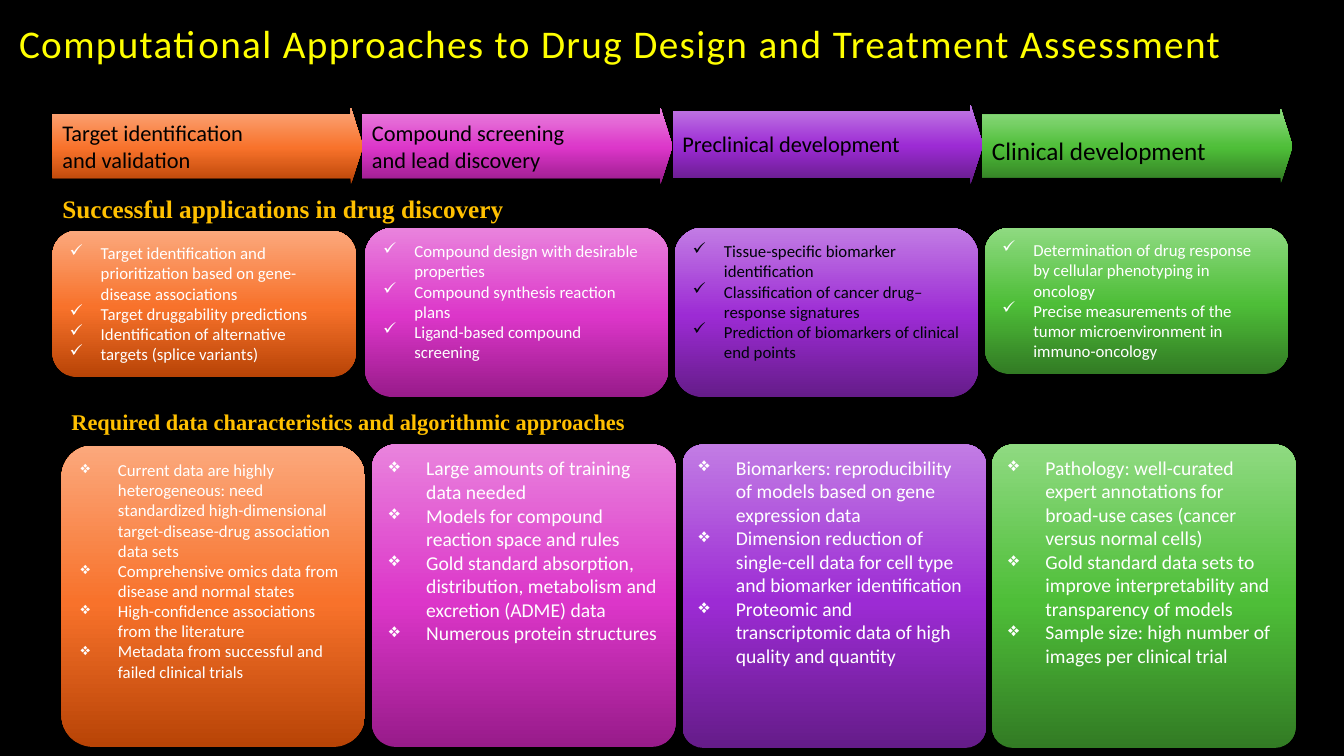
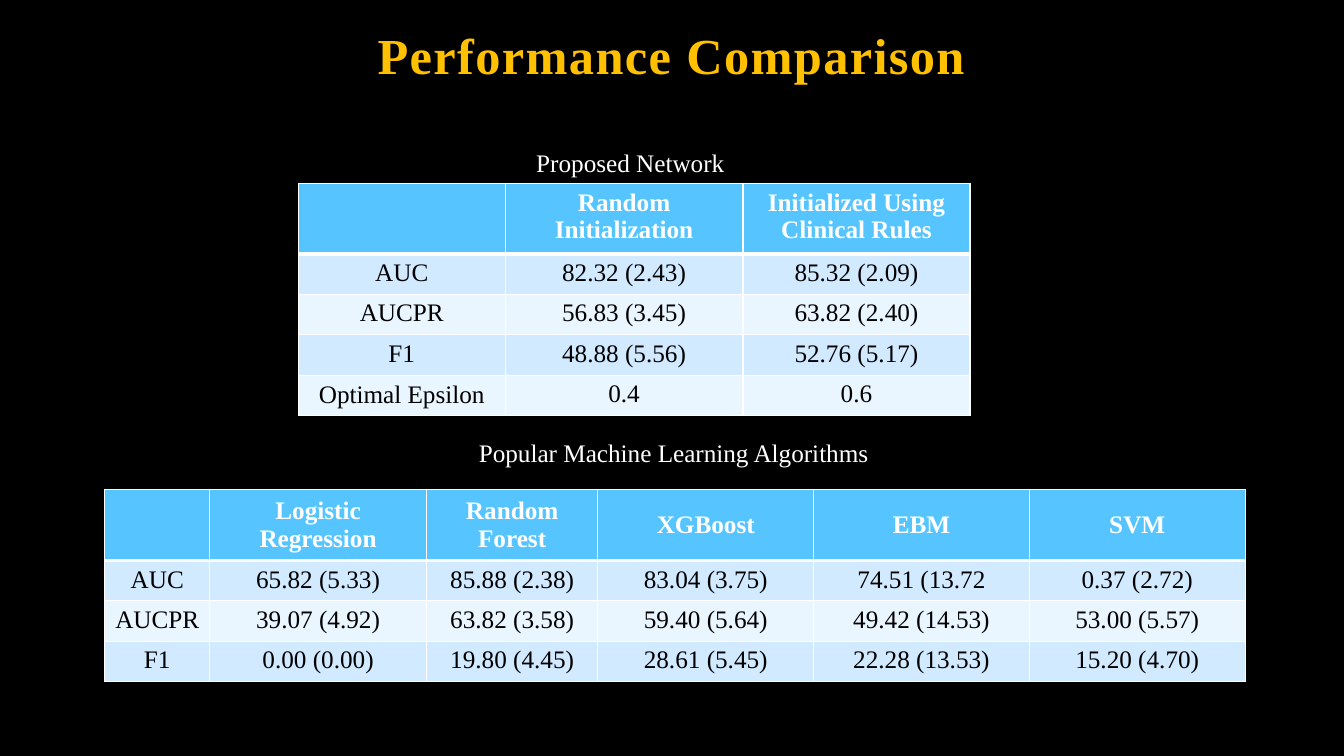
from copy import deepcopy

from lxml.etree import SubElement
from pptx import Presentation
from pptx.dml.color import RGBColor
from pptx.enum.shapes import MSO_SHAPE
from pptx.enum.text import MSO_ANCHOR, PP_ALIGN
from pptx.oxml.ns import qn
from pptx.util import Pt

PX = 9144  # 100 px to the inch
SANS, SERIF = "Calibri", "Times New Roman"
INK = {
    "back": "000000", "dark": "000000", "light": "FFFFFF", "navy": "00040A",
    "gold": "FFC000", "yellow": "FFFF00",
    "head": "56C5FF", "odd": "D1EAFF", "even": "E9F5FF",
}
HUES = {  # bottom, middle, top
    "orange": ("B84406", "F8722B", "FBA87C"),
    "pink": ("981B8A", "DC36C9", "E983DD"),
    "purple": ("651C89", "9C2BD4", "C27CE4"),
    "green": ("327B24", "4EBE38", "8FDA81"),
}


def write(frame, lines, size, face, ink, bold=False, align=PP_ALIGN.LEFT,
          space=None, mark=None, track=0):
    """Fill a text frame; mark is a (bullet, indent) pair, track is in points."""
    frame.word_wrap = True
    for i, line in enumerate(lines):
        para = frame.add_paragraph() if i else frame.paragraphs[0]
        para.alignment = align
        if space:
            para.line_spacing = space
        if mark:
            props = para._p.get_or_add_pPr()
            props.set("marL", str(mark[1] * PX))
            props.set("indent", str(-mark[1] * PX))
            SubElement(props, qn("a:buChar")).set("char", mark[0])
        run = para.add_run()
        run.text = line
        font = run.font
        font.size, font.name, font.bold = Pt(size), face, bold
        font.color.rgb = RGBColor.from_string(INK[ink])
        if track:
            run._r.get_or_add_rPr().set("spc", str(track * 100))


def label(slide, area, text, size, ink, face=SERIF, anchor=MSO_ANCHOR.TOP, **style):
    frame = slide.shapes.add_textbox(*[n * PX for n in area]).text_frame
    frame.vertical_anchor = anchor
    write(frame, [text], size, face, ink, **style)


deck = Presentation()
deck.slide_width, deck.slide_height = 1333 * PX, 750 * PX
back = deck.slide_master.background.fill
back.solid()
back.fore_color.rgb = RGBColor.from_string(INK["back"])
blank = deck.slide_layouts[6]
title = {"anchor": MSO_ANCHOR.BOTTOM, "space": 0.9, "track": 1}

# Slide 1: stages of drug design
slide = deck.slides.add_slide(blank)
label(slide, (9, 0, 1301, 71),
      "Computational Approaches to Drug Design and Treatment Assessment",
      28, "yellow", SANS, **title)
label(slide, (52, 187, 468, 40), "Successful applications in drug discovery",
      18, "gold", bold=True)
label(slide, (61, 400, 582, 37),
      "Required data characteristics and algorithmic approaches",
      16, "gold", bold=True)

# Each part: area, text size, ink, lines; arrows add line spacing, needs a corner
arrows = [
    ((52, 107, 308, 76), 16, ["Target identification", "and validation"], None),
    ((359, 107, 308, 76), 16, ["Compound screening", "and lead discovery"], None),
    ((667, 104, 308, 79), 16, ["Preclinical development"], 1.5),
    ((974, 108, 308, 74), 18, ["Clinical development"], 1.5),
]
uses = [
    ((52, 229, 301, 145), "light", [
        "Target identification and prioritization based on gene-disease associations",
        "Target druggability predictions",
        "Identification of alternative",
        "targets (splice variants)"]),
    ((362, 226, 301, 168), "light", [
        "Compound design with desirable properties",
        "Compound synthesis reaction plans",
        "Ligand-based compound screening"]),
    ((669, 226, 301, 168), "navy", [
        "Tissue-specific biomarker identification",
        "Classification of cancer drug–response signatures",
        "Prediction of biomarkers of clinical end points"]),
    ((977, 226, 301, 145), "light", [
        "Determination of drug response by cellular phenotyping in oncology",
        "Precise measurements of the tumor microenvironment in immuno-oncology"]),
]
needs = [
    ((61, 442, 301, 299), 12, 0.105, [
        "Current data are highly heterogeneous: need standardized "
        "high-dimensional target-disease-drug association data sets",
        "Comprehensive omics data from disease and normal states",
        "High-confidence associations from the literature",
        "Metadata from successful and failed clinical trials"]),
    ((369, 441, 301, 300), 14, 0.078, [
        "Large amounts of training data needed",
        "Models for compound reaction space and rules",
        "Gold standard absorption, distribution, metabolism and excretion (ADME) data",
        "Numerous protein structures"]),
    ((677, 441, 301, 301), 14, 0.068, [
        "Biomarkers: reproducibility of models based on gene expression data",
        "Dimension reduction of single-cell data for cell type and "
        "biomarker identification",
        "Proteomic and transcriptomic data of high quality and quantity"]),
    ((984, 441, 301, 301), 14, 0.068, [
        "Pathology: well-curated expert annotations for broad-use cases "
        "(cancer versus normal cells)",
        "Gold standard data sets to improve interpretability and "
        "transparency of models",
        "Sample size: high number of images per clinical trial"]),
]

ARROW, CARD = MSO_SHAPE.RIGHT_ARROW, MSO_SHAPE.ROUNDED_RECTANGLE
parts = [
    [(ARROW, area, (0.836, 0.158), lines, size, "dark", {"space": space})
     for area, size, lines, space in arrows],
    [(CARD, area, (0.167,), lines, 12, ink, {"mark": ("✓", 31)})
     for area, ink, lines in uses],
    [(CARD, area, (bend,), lines, size, "light", {"mark": ("❖", 37)})
     for area, size, bend, lines in needs],
]
for row in parts:
    for hue, (kind, area, bends, lines, size, ink, style) in zip(HUES.values(), row):
        shape = slide.shapes.add_shape(kind, *[n * PX for n in area])
        shape.shadow.inherit = False
        shape.line.fill.background()
        for i, bend in enumerate(bends):
            shape.adjustments[i] = bend
        fill = shape.fill
        fill.gradient()
        fill.gradient_angle = 90
        first = shape._element.spPr.find(".//" + qn("a:gs"))
        first.addnext(deepcopy(first))
        for stop, place, tone in zip(fill.gradient_stops, (0, 0.48, 1), hue):
            stop.position = place
            stop.color.rgb = RGBColor.from_string(tone)
        shape.text_frame.vertical_anchor = MSO_ANCHOR.TOP
        write(shape.text_frame, lines, size, SANS, ink, **style)

# Slide 2: results
slide = deck.slides.add_slide(blank)
label(slide, (91, 17, 1150, 73), "Performance Comparison", 36, "gold",
      bold=True, align=PP_ALIGN.CENTER, **title)
label(slide, (522, 141, 216, 40), "Proposed Network", 18, "light")
label(slide, (465, 429, 411, 40), "Popular Machine Learning Algorithms", 18, "light")

TOP, MID = MSO_ANCHOR.TOP, MSO_ANCHOR.MIDDLE
grids = [
    ((296, 182), (205, 236, 225), TOP, [
        ("", "Random Initialization", "Initialized Using Clinical Rules"),
        ("AUC", "82.32 (2.43)", "85.32 (2.09)"),
        ("AUCPR", "56.83 (3.45)", "63.82 (2.40)"),
        ("F1", "48.88 (5.56)", "52.76 (5.17)"),
        ("Optimal Epsilon", "0.4", "0.6")]),
    ((104, 486), (104, 215, 170, 214, 214, 214), MID, [
        ("", "Logistic Regression", "Random Forest", "XGBoost", "EBM", "SVM"),
        ("AUC", "65.82 (5.33)", "85.88 (2.38)", "83.04 (3.75)", "74.51 (13.72",
         "0.37 (2.72)"),
        ("AUCPR", "39.07 (4.92)", "63.82 (3.58)", "59.40 (5.64)", "49.42 (14.53)",
         "53.00 (5.57)"),
        ("F1", "0.00 (0.00)", "19.80 (4.45)", "28.61 (5.45)", "22.28 (13.53)",
         "15.20 (4.70)")]),
]
for (left, top), widths, anchor, rows in grids:
    highs = [70] + [40] * (len(rows) - 1)
    table = slide.shapes.add_table(
        len(rows), len(widths), left * PX, top * PX,
        sum(widths) * PX, sum(highs) * PX).table
    table.horz_banding = False
    for col, width in zip(table.columns, widths):
        col.width = width * PX
    for r, texts in enumerate(rows):
        table.rows[r].height = highs[r] * PX
        tone = "head" if r == 0 else "odd" if r % 2 else "even"
        for c, text in enumerate(texts):
            cell = table.cell(r, c)
            props = cell._tc.get_or_add_tcPr()
            for side in ("lnL", "lnR", "lnT", "lnB"):
                thick = (r, side) in ((0, "lnB"), (1, "lnT"))
                edge = SubElement(props, qn("a:" + side))
                edge.set("w", str(Pt(3 if thick else 1)))
                paint = SubElement(edge, qn("a:solidFill"))
                SubElement(paint, qn("a:srgbClr")).set("val", INK["light"])
            cell.fill.solid()
            cell.fill.fore_color.rgb = RGBColor.from_string(INK[tone])
            middle = text == "Optimal Epsilon"
            cell.vertical_anchor = anchor if r == 0 else MID if middle else TOP
            if text:
                write(cell.text_frame, [text], 18, SERIF,
                      "dark" if r else "light", bold=r == 0, align=PP_ALIGN.CENTER)

deck.save("out.pptx")
